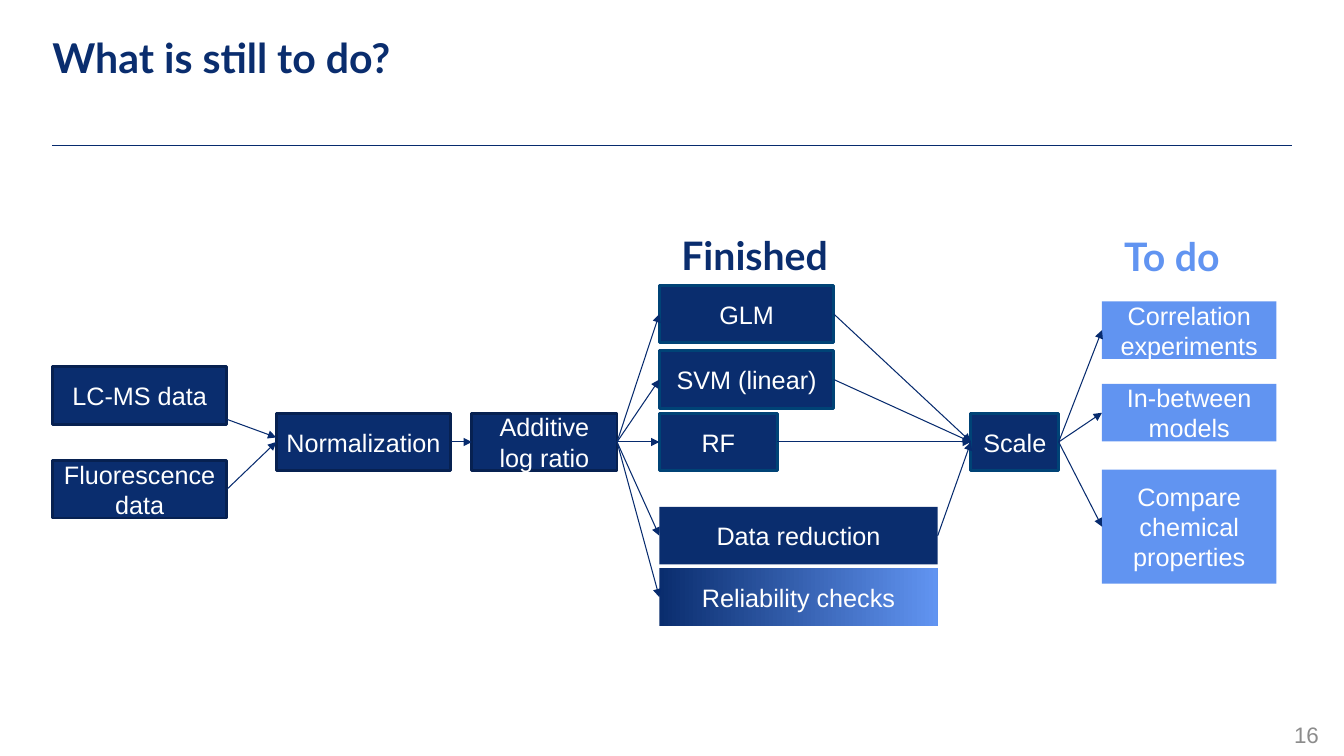
from lxml import etree
from pptx import Presentation
from pptx.dml.color import RGBColor
from pptx.enum.shapes import MSO_CONNECTOR, MSO_SHAPE
from pptx.enum.text import MSO_ANCHOR, MSO_AUTO_SIZE, PP_ALIGN
from pptx.oxml.ns import qn
from pptx.util import Inches, Pt

NAVY, ARROW, BLUE = "0A2D6E", "072B6E", "6194F1"
INPUT_EDGE, MODEL_EDGE = "072151", "004376"
WHITE, GREY = "FFFFFF", "8C8C8C"
HEADING = {"name": "Lato", "bold": True}
BODY = {"name": "Arial", "bold": False}
LEFT_SITE, RIGHT_SITE = 1, 3
ROW = 0.57


def color(code):
    return RGBColor.from_string(code)


class FlowSlide:
    def __init__(self, deck):
        self.page = deck.slides.add_slide(deck.slide_layouts[5])

    def fill_text(self, shape, text, font, size, code, align=PP_ALIGN.LEFT,
                  anchor=MSO_ANCHOR.TOP, inset=None):
        frame = shape.text_frame
        layout = {"word_wrap": True, "auto_size": MSO_AUTO_SIZE.NONE,
                  "vertical_anchor": anchor}
        if inset is not None:
            for side in ("left", "right", "top", "bottom"):
                layout["margin_" + side] = Inches(inset)
        for key, value in layout.items():
            setattr(frame, key, value)
        para = frame.paragraphs[0]
        para.alignment = align
        span = para.add_run()
        span.text = text
        for key, value in {**font, "size": Pt(size)}.items():
            setattr(span.font, key, value)
        span.font.color.rgb = color(code)

    def title(self, text, *place):
        title = self.page.shapes.title
        for key, value in zip(("left", "top", "width", "height"), place):
            setattr(title, key, Inches(value))
        self.fill_text(title, text, HEADING, 29.3, NAVY, inset=0)

    def label(self, text, place, font, size, code, **options):
        box = self.page.shapes.add_textbox(*map(Inches, place))
        self.fill_text(box, text, font, size, code, **options)

    def box(self, text, left, top, width, height=ROW, fill=NAVY, edge=None):
        """Add a centred box; two fill colours make a gradient, left to right."""
        box = self.page.shapes.add_shape(
            MSO_SHAPE.RECTANGLE, *map(Inches, (left, top, width, height)))
        box.shadow.inherit = False
        if isinstance(fill, tuple):
            box.fill.gradient()
            box.fill.gradient_angle = 0
            for position, (stop, code) in enumerate(zip(box.fill.gradient_stops, fill)):
                stop.position = position
                stop.color.rgb = color(code)
        else:
            box.fill.solid()
            box.fill.fore_color.rgb = color(fill)
        if edge:
            box.line.color.rgb = color(edge)
            box.line.width = Pt(2)
        else:
            box.line.fill.background()
        self.fill_text(box, text, BODY, 18, WHITE, PP_ALIGN.CENTER, MSO_ANCHOR.MIDDLE)
        return box

    def line(self, start=(0, 0), end=(0, 0), arrow=False):
        line = self.page.shapes.add_connector(
            MSO_CONNECTOR.STRAIGHT, *map(Inches, (*start, *end)))
        line.line.color.rgb = color(ARROW)
        line.line.width = Pt(0.75)
        properties = line._element.spPr
        if arrow:
            etree.SubElement(properties.find(qn("a:ln")), qn("a:tailEnd"), type="triangle")
        etree.SubElement(properties, qn("a:effectLst"))
        return line

    def join(self, source, target):
        """Draw an arrow from the right side of one box to the left of another."""
        line = self.line(arrow=True)
        line.begin_connect(source, RIGHT_SITE)
        line.end_connect(target, LEFT_SITE)


def main():
    deck = Presentation()
    deck.slide_width, deck.slide_height = Inches(13.33), Inches(7.5)
    slide = FlowSlide(deck)

    slide.title("What is still to do?", 0.52, 0.32, 12.28, 0.54)
    slide.line((0.52, 1.44), (12.81, 1.44))
    slide.label("16", (10.18, 7.09, 3, 0.4), BODY, 16, GREY,
                align=PP_ALIGN.RIGHT, anchor=MSO_ANCHOR.MIDDLE)
    slide.label("Finished", (6.66, 2.25, 1.93, ROW), HEADING, 28, NAVY)
    slide.label("To do", (11.05, 2.26, 1.93, ROW), HEADING, 28, BLUE)

    slide.box("LC-MS data", 0.52, 3.64, 1.73, edge=INPUT_EDGE)
    fluorescence = slide.box("Fluorescence data", 0.52, 4.57, 1.73, edge=INPUT_EDGE)
    normalization = slide.box("Normalization", 2.74, 4.1, 1.73, edge=INPUT_EDGE)
    log_ratio = slide.box("Additive log ratio", 4.68, 4.1, 1.44, edge=INPUT_EDGE)
    scale = slide.box("Scale", 9.63, 4.1, 0.87, edge=MODEL_EDGE)

    models = [slide.box(text, 6.54, top, width, edge=MODEL_EDGE)
              for text, top, width in (("GLM", 2.83, 1.73),
                                       ("SVM (linear)", 3.48, 1.73),
                                       ("RF", 4.1, 1.17))]
    reduction = slide.box("Data reduction", 6.54, 5.03, 2.76)
    checks = slide.box("Reliability checks", 6.54, 5.64, 2.76, fill=(NAVY, BLUE))
    open_tasks = [slide.box(text, 10.93, top, 1.73, height, fill=BLUE)
                  for text, top, height in (("Correlation experiments", 2.99, ROW),
                                            ("In-between models", 3.81, ROW),
                                            ("Compare chemical properties", 4.66, 1.13))]

    slide.line((2.25, 4.16), (2.74, 4.34), arrow=True)
    slide.join(fluorescence, normalization)
    slide.join(normalization, log_ratio)
    for step in (*models, reduction, checks):
        slide.join(log_ratio, step)
    for step in (*models, reduction):
        slide.join(step, scale)
    for task in open_tasks:
        slide.join(scale, task)

    deck.save("out.pptx")


if __name__ == "__main__":
    main()
